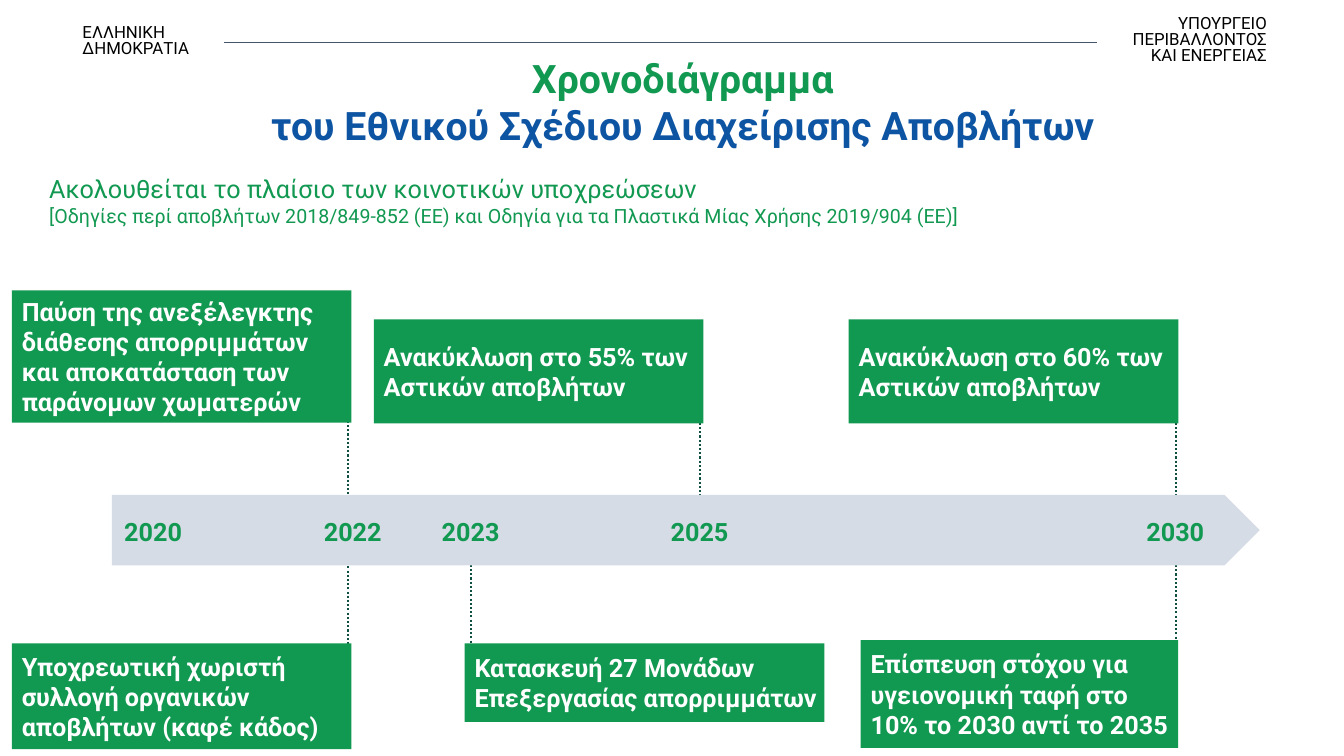
from lxml import etree
from pptx import Presentation
from pptx.dml.color import RGBColor
from pptx.enum.dml import MSO_LINE
from pptx.enum.shapes import MSO_CONNECTOR, MSO_SHAPE
from pptx.enum.text import MSO_ANCHOR, MSO_AUTO_SIZE, PP_ALIGN
from pptx.oxml.ns import qn
from pptx.util import Cm, Pt

RECT, PLATE = MSO_SHAPE.RECTANGLE, MSO_SHAPE.PENTAGON
LEFT, MID, RIGHT, JUST = PP_ALIGN.LEFT, PP_ALIGN.CENTER, PP_ALIGN.RIGHT, PP_ALIGN.JUSTIFY
TOP, CENTRE = MSO_ANCHOR.TOP, MSO_ANCHOR.MIDDLE
FIT, FIXED = MSO_AUTO_SIZE.SHAPE_TO_FIT_TEXT, MSO_AUTO_SIZE.NONE
DOTS = MSO_LINE.ROUND_DOT
STRAIGHT = MSO_CONNECTOR.STRAIGHT

GREEN, BLUE, BLACK, WHITE = "119851", "0D54A3", "000000", "FFFFFF"
GREY, SLATE, PINE = "D6DCE5", "445469", "0F5043"

# x, top, bottom
STEMS = [
    (8.76, 9.12, 12.85), (17.64, 8.64, 13.31), (29.64, 8.64, 12.6),
    (8.76, 14.27, 18.01), (11.86, 13.28, 16.21), (29.64, 13.92, 18.01),
]
# left, top, width, height, text
GOALS = [
    (0.3, 7.32, 8.56, 3.33, "Παύση της ανεξέλεγκτης διάθεσης απορριμμάτων "
     "και αποκατάσταση των παράνομων χωματερών"),
    (9.42, 8.05, 8.31, 2.62, "Ανακύκλωση στο 55% των Αστικών αποβλήτων"),
    (21.39, 8.05, 8.31, 2.62, "Ανακύκλωση στο 60% των Αστικών αποβλήτων"),
    (0.3, 16.21, 8.56, 2.67, "Υποχρεωτική χωριστή συλλογή οργανικών "
     "αποβλήτων (καφέ κάδος)"),
    (11.71, 16.21, 9.07, 1.98, "Κατασκευή 27 Μονάδων Επεξεργασίας απορριμμάτων"),
    (21.69, 16.13, 8, 2.72, "Επίσπευση στόχου για υγειονομική ταφή στο "
     "10% το 2030 αντί το 2035"),
]
YEARS = {"2020": 2.87, "2022": 7.9, "2023": 10.87, "2025": 16.64, "2030": 28.63}


def rgb(code):
    return RGBColor.from_string(code)


class Deck:
    font = "Roboto"

    def __init__(self):
        self.prs = Presentation()
        self.prs.slide_width, self.prs.slide_height = Cm(33.87), Cm(19.05)
        self.slide = self.prs.slides.add_slide(self.prs.slide_layouts[5])

    def fill(self, frame, rows, align=LEFT, bold=False, space=None):
        """Fill a frame with rows of (text, size, colour)."""
        frame.text = "\n".join(row[0] for row in rows)
        for para, (_, size, color) in zip(frame.paragraphs, rows):
            para.alignment = align
            if space:
                para.line_spacing = space
            for run in para.runs:
                font = run.font
                font.name, font.size, font.bold = self.font, Pt(size), bold
                font.color.rgb = rgb(color)

    def title(self, x, y, w, h, rows):
        shape = self.slide.shapes.title
        shape.left, shape.top, shape.width, shape.height = map(Cm, (x, y, w, h))
        frame = shape.text_frame
        frame.auto_size, frame.vertical_anchor = FIXED, TOP
        self.fill(frame, rows, MID, True)
        # The first line sits slightly right of centre
        props = frame.paragraphs[0]._p.get_or_add_pPr()
        props.set("marL", str(Cm(0.5)))

    def text(self, x, y, w, h, rows, wrap=True, fit=FIXED, **style):
        frame = self.slide.shapes.add_textbox(*map(Cm, (x, y, w, h))).text_frame
        frame.word_wrap, frame.auto_size = wrap, fit
        self.fill(frame, rows, **style)

    def line(self, x1, y1, x2, y2, color, width, dash=None):
        link = self.slide.shapes.add_connector(STRAIGHT, *map(Cm, (x1, y1, x2, y2)))
        link.line.color.rgb, link.line.width = rgb(color), Pt(width)
        if dash:
            link.line.dash_style = dash
        etree.SubElement(link._element.spPr, qn("a:effectLst"))

    def shape(self, kind, x, y, w, h, color):
        shape = self.slide.shapes.add_shape(kind, *map(Cm, (x, y, w, h)))
        shape.shadow.inherit = False
        shape.fill.solid()
        shape.fill.fore_color.rgb = rgb(color)
        shape.line.fill.background()
        return shape

    def goal(self, x, y, w, h, words):
        frame = self.shape(RECT, x, y, w, h, GREEN).text_frame
        frame.word_wrap, frame.vertical_anchor = True, CENTRE
        frame.margin_left = Cm(0.25)
        frame.margin_top = frame.margin_right = frame.margin_bottom = 0
        self.fill(frame, [(words, 18, WHITE)], bold=True)


def main():
    deck = Deck()
    deck.line(5.64, 1.07, 27.64, 1.07, SLATE, 1)
    deck.text(27.94, 0.3, 4.24, 1.5,
              [("ΥΠΟΥΡΓΕΙΟ ΠΕΡΙΒΑΛΛΟΝΤΟΣ ΚΑΙ ΕΝΕΡΓΕΙΑΣ", 12, BLACK)],
              align=RIGHT, space=0.8)
    deck.text(1.83, 0.51, 4.7, 1.07, [("ΕΛΛΗΝΙΚΗ ΔΗΜΟΚΡΑΤΙΑ", 12, BLACK)], space=0.8)
    deck.title(2.49, 1.24, 28.93, 1.91, [
        ("Χρονοδιάγραμμα", 28, GREEN),
        ("του Εθνικού Σχέδιου Διαχείρισης Αποβλήτων", 28, BLUE)])
    deck.text(0.99, 4.24, 31.9, 1.63, [
        ("Ακολουθείται το πλαίσιο των κοινοτικών υποχρεώσεων", 18, GREEN),
        ("[Οδηγίες περί αποβλήτων 2018/849-852 (ΕΕ) και Οδηγία για τα "
         "Πλαστικά Μίας Χρήσης 2019/904 (ΕΕ)]", 14, GREEN)], fit=FIT, align=JUST)

    for x, top, end in STEMS:
        deck.line(x, top, x, end, PINE, 1.5, DOTS)
    deck.shape(PLATE, 2.82, 12.47, 28.93, 1.78, GREY)
    for goal in GOALS:
        deck.goal(*goal)
    for year, x in YEARS.items():
        deck.text(x, 12.88, 1.98, 1.02, [(year, 18, GREEN)],
                  wrap=False, fit=FIT, align=MID, bold=True)
    deck.prs.save("out.pptx")


if __name__ == "__main__":
    main()
